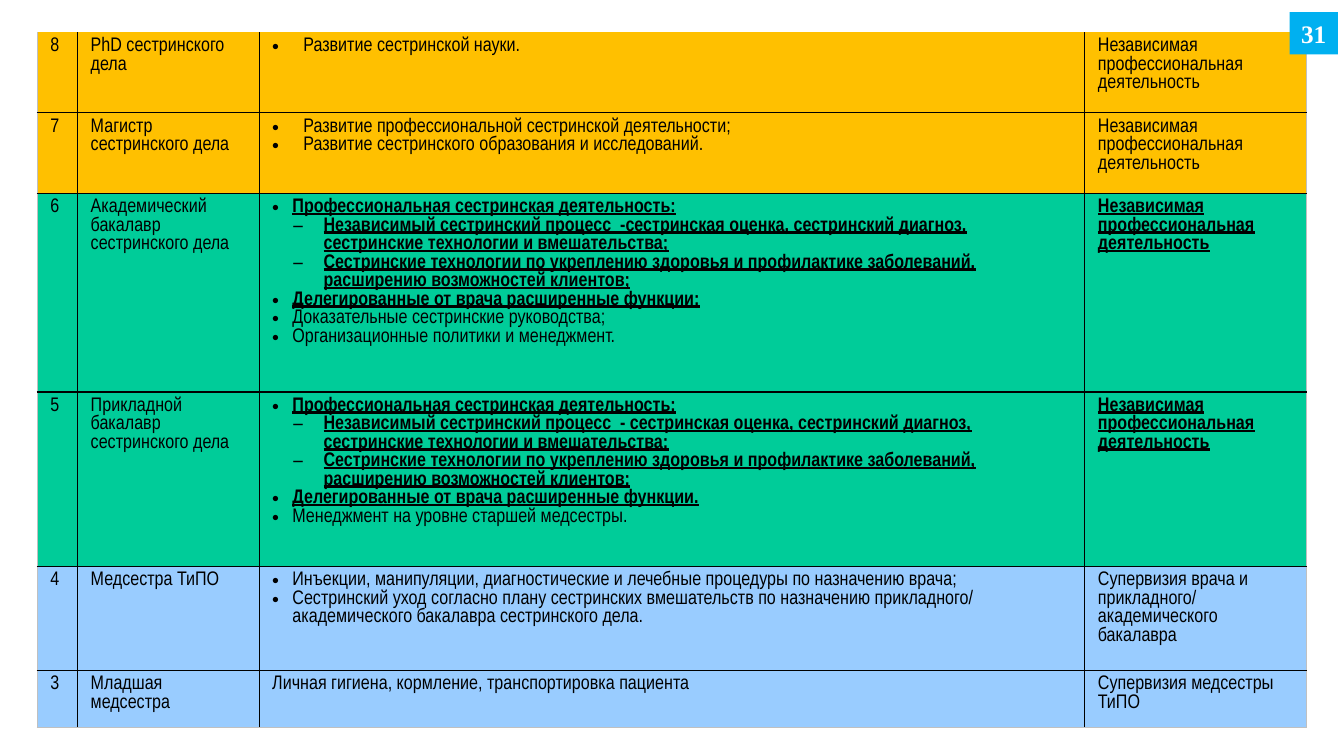
"""Build a slide with a table of nursing qualification levels."""
from lxml import etree
from pptx import Presentation
from pptx.dml.color import RGBColor
from pptx.enum.shapes import MSO_SHAPE
from pptx.enum.text import MSO_ANCHOR, PP_ALIGN
from pptx.oxml.ns import qn
from pptx.util import Inches, Pt

RECTANGLE = MSO_SHAPE.RECTANGLE
MIDDLE = MSO_ANCHOR.MIDDLE
CENTER = PP_ALIGN.CENTER

BLACK = RGBColor(0x00, 0x00, 0x00)
WHITE = RGBColor(0xFF, 0xFF, 0xFF)
GREY = RGBColor(0xC0, 0xC0, 0xC0)
AMBER = RGBColor(0xFF, 0xC0, 0x00)
GREEN = RGBColor(0x00, 0xCC, 0x99)
PALE_BLUE = RGBColor(0x99, 0xCC, 0xFF)
SKY_BLUE = RGBColor(0x00, 0xB0, 0xF0)

COLUMN_WIDTHS = (0.4, 1.8, 8.19, 2.2)
ROW_HEIGHTS = (0.8, 0.8, 1.97, 1.73, 1.03, 0.57)

PLAIN = {}
KEY = {"bold": True, "underline": True}
WIDE = {"bullet": "•", "indent": 0.31, "hanging": 0.31}
POINT = {"bullet": "•", "indent": 0.2, "hanging": 0.2}
KEY_POINT = {**POINT, **KEY}
KEY_DASH = {"bullet": "−", "indent": 0.51, "hanging": 0.31, **KEY}

INDEPENDENT = "Независимая профессиональная деятельность"
PROFESSIONAL = ("Профессиональная сестринская деятельность:", KEY_POINT)
TECHNOLOGIES = ("Сестринские технологии по укреплению здоровья и профилактике "
                "заболеваний, расширению возможностей клиентов;", KEY_DASH)

LEVELS = (
    ("8", "PhD сестринского дела", AMBER,
     [("Развитие сестринской науки.", WIDE)], (INDEPENDENT, PLAIN)),
    ("7", "Магистр сестринского дела", AMBER,
     [("Развитие профессиональной сестринской деятельности;", WIDE),
      ("Развитие сестринского образования и исследований.", WIDE)],
     (INDEPENDENT, PLAIN)),
    ("6", "Академический бакалавр  сестринского дела", GREEN,
     [PROFESSIONAL,
      ("Независимый сестринский процесс  -сестринская оценка, сестринский "
       "диагноз, сестринские технологии и вмешательства;", KEY_DASH),
      TECHNOLOGIES,
      ("Делегированные от врача расширенные функции;", KEY_POINT),
      ("Доказательные сестринские руководства;", POINT),
      ("Организационные политики и менеджмент.", POINT)],
     (INDEPENDENT, KEY)),
    ("5", "Прикладной бакалавр сестринского дела", GREEN,
     [PROFESSIONAL,
      ("Независимый сестринский процесс  - сестринская оценка, сестринский "
       "диагноз, сестринские технологии и вмешательства;", KEY_DASH),
      TECHNOLOGIES,
      ("Делегированные от врача расширенные функции.", KEY_POINT),
      ("Менеджмент на уровне старшей медсестры.", POINT)],
     (INDEPENDENT, KEY)),
    ("4", "Медсестра ТиПО", PALE_BLUE,
     [("Инъекции, манипуляции, диагностические и лечебные процедуры "
       "по назначению врача;", POINT),
      ("Сестринский уход согласно плану сестринских вмешательств по назначению "
       "прикладного/ академического бакалавра сестринского дела.", POINT)],
     ("Супервизия врача и прикладного/ академического бакалавра", PLAIN)),
    ("3", "Младшая медсестра", PALE_BLUE,
     [("Личная гигиена, кормление, транспортировка пациента", PLAIN)],
     ("Супервизия медсестры ТиПО", PLAIN)),
)


def write(paragraph, text, size=14, font="Arial Narrow", color=BLACK, bold=False,
          underline=False, align=None, bullet=None, indent=0, hanging=0):
    """Fill a paragraph with one formatted run and an optional bullet."""
    run = paragraph.add_run()
    run.text = text
    run.font.size = Pt(size)
    run.font.name = font
    run.font.color.rgb = color
    run.font.bold = bold
    run.font.underline = underline
    paragraph.alignment = align
    paragraph.line_spacing = 1.0
    if bullet:
        properties = paragraph._p.get_or_add_pPr()
        properties.set("marL", str(Inches(indent)))
        properties.set("indent", str(-Inches(hanging)))
        etree.SubElement(properties, qn("a:buFont"), typeface="Arial")
        etree.SubElement(properties, qn("a:buChar"), char=bullet)


def set_borders(cell, colors):
    """Draw left, right, top and bottom borders; None leaves a side empty."""
    properties = cell._tc.get_or_add_tcPr()
    for place, (side, color) in enumerate(zip("LRTB", colors)):
        border = etree.Element(qn(f"a:ln{side}"), w=str(Pt(1)))
        if color is None:
            etree.SubElement(border, qn("a:noFill"))
        else:
            fill = etree.SubElement(border, qn("a:solidFill"))
            etree.SubElement(fill, qn("a:srgbClr"), val=str(color))
        properties.insert(place, border)


def fill_cell(cell, entries, color, borders):
    """Write the paragraphs of a cell and set its look."""
    cell.margin_left = cell.margin_right = Inches(0.13)
    cell.margin_top = cell.margin_bottom = Inches(0.05)
    cell.fill.solid()
    cell.fill.fore_color.rgb = color
    set_borders(cell, borders)
    frame = cell.text_frame
    for index, (text, style) in enumerate(entries):
        paragraph = frame.add_paragraph() if index else frame.paragraphs[0]
        write(paragraph, text, **style)


def add_levels(slide):
    """Add the table of qualification levels."""
    last_row, last_column = len(ROW_HEIGHTS) - 1, len(COLUMN_WIDTHS) - 1
    table = slide.shapes.add_table(
        len(ROW_HEIGHTS), len(COLUMN_WIDTHS), Inches(0.37), Inches(0.32),
        Inches(sum(COLUMN_WIDTHS)), Inches(sum(ROW_HEIGHTS))).table
    table.first_row = table.horz_banding = False
    for column, width in zip(table.columns, COLUMN_WIDTHS):
        column.width = Inches(width)
    for row, height in zip(table.rows, ROW_HEIGHTS):
        row.height = Inches(height)
    for r, (level, title, color, duties, autonomy) in enumerate(LEVELS):
        contents = ([(level, PLAIN)], [(title, PLAIN)], duties, [autonomy])
        for c, entries in enumerate(contents):
            borders = (BLACK if c else GREY,
                       BLACK if c < last_column else GREY,
                       BLACK if r else None,
                       BLACK if r < last_row else GREY)
            fill_cell(table.cell(r, c), entries, color, borders)


def add_page_number(slide, number):
    """Add the page number on its square in the top right corner."""
    badge = slide.shapes.add_shape(RECTANGLE, Inches(12.79), Inches(0.12),
                                   Inches(0.48), Inches(0.42))
    badge.shadow.inherit = False
    badge.fill.solid()
    badge.fill.fore_color.rgb = SKY_BLUE
    badge.line.fill.background()
    frame = badge.text_frame
    frame.vertical_anchor = MIDDLE
    write(frame.paragraphs[0], number, size=18, font="Times New Roman",
          color=WHITE, bold=True, align=CENTER)


def main():
    """Build and save the slide."""
    deck = Presentation()
    deck.slide_width, deck.slide_height = Inches(13.33), Inches(7.5)
    slide = deck.slides.add_slide(deck.slide_layouts[6])
    add_levels(slide)
    add_page_number(slide, "31")
    deck.save("out.pptx")


if __name__ == "__main__":
    main()
